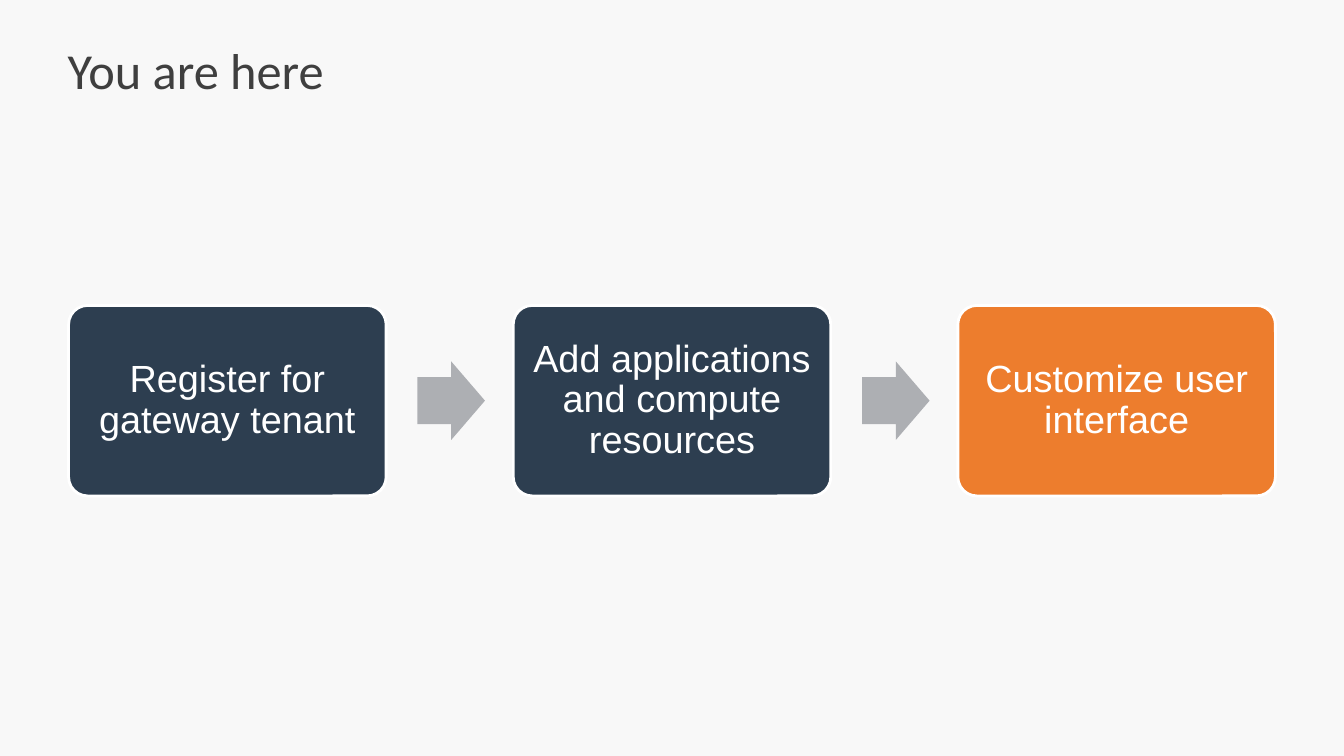
"""Build a slide with a three-step process whose current step is highlighted."""
from pptx import Presentation
from pptx.dml.color import RGBColor
from pptx.enum.shapes import MSO_SHAPE
from pptx.enum.text import MSO_ANCHOR, PP_ALIGN
from pptx.util import Inches, Pt

ROUNDED = MSO_SHAPE.ROUNDED_RECTANGLE
ARROW = MSO_SHAPE.RIGHT_ARROW
MIDDLE = MSO_ANCHOR.MIDDLE
LEFT, CENTER = PP_ALIGN.LEFT, PP_ALIGN.CENTER

PAPER = RGBColor(0xF8, 0xF8, 0xF8)
INK = RGBColor(0x3F, 0x3F, 0x3F)
NAVY = RGBColor(0x2D, 0x3E, 0x50)
ORANGE = RGBColor(0xED, 0x7D, 0x2D)
GRAY = RGBColor(0xAD, 0xAF, 0xB3)
WHITE = RGBColor(0xFF, 0xFF, 0xFF)

STEPS = [
    ("Register for gateway tenant", NAVY),
    ("Add applications and compute resources", NAVY),
    ("Customize user interface", ORANGE),
]
STEP_X, STEP_Y, STEP_W, STEP_H = 0.68, 3.03, 3.15, 1.89
PITCH = 4.41
ARROW_W, ARROW_H, ARROW_GAP = 0.67, 0.78, 0.31


class SlideBuilder:
    """Hold the text styles and the current slide."""

    title = {"size": Pt(36), "name": "Calibri", "color": INK}
    step = {"size": Pt(27), "name": "Arial", "color": WHITE}

    def __init__(self, prs):
        self.s = prs.slides.add_slide(prs.slide_layouts[6])
        fill = self.s.background.fill
        fill.solid()
        fill.fore_color.rgb = PAPER

    def set_text(self, sp, text, style, align, spacing, margins):
        """Fill a shape with one styled paragraph."""
        tf = sp.text_frame
        frame = {"word_wrap": True, "vertical_anchor": MIDDLE}
        sides = ("margin_left", "margin_top", "margin_right", "margin_bottom")
        frame.update(zip(sides, map(Inches, margins)))
        for key, value in frame.items():
            setattr(tf, key, value)
        p = tf.paragraphs[0]
        p.alignment = align
        p.line_spacing = spacing
        r = p.add_run()
        r.text = text
        for key, value in style.items():
            if key == "color":
                r.font.color.rgb = value
            else:
                setattr(r.font, key, value)

    def add_title(self, text, x, y, w, h):
        """Add the slide title."""
        sp = self.s.shapes.add_textbox(*map(Inches, (x, y, w, h)))
        self.set_text(sp, text, self.title, LEFT, 1.0, (0, 0.07, 0, 0.07))

    def add_shape(self, kind, x, y, w, h, color, adjustments):
        """Add a flat filled shape without an outline."""
        sp = self.s.shapes.add_shape(kind, *map(Inches, (x, y, w, h)))
        sp.shadow.inherit = False
        for i, value in enumerate(adjustments):
            sp.adjustments[i] = value
        sp.fill.solid()
        sp.fill.fore_color.rgb = color
        sp.line.fill.background()
        return sp

    def add_step(self, text, x, color):
        """Add a rounded, labelled step."""
        sp = self.add_shape(ROUNDED, x, STEP_Y, STEP_W, STEP_H, color, [0.1])
        sp.line.color.rgb = WHITE
        sp.line.width = Pt(2)
        self.set_text(sp, text, self.step, CENTER, 0.9, [0.11] * 4)

    def add_arrow(self, x):
        """Add a block arrow centred on the row of steps."""
        y = STEP_Y + (STEP_H - ARROW_H) / 2
        self.add_shape(ARROW, x, y, ARROW_W, ARROW_H, GRAY, [0.6, 0.5])


def main():
    """Build and save the slide."""
    prs = Presentation()
    prs.slide_width, prs.slide_height = Inches(13.33), Inches(7.5)
    slide = SlideBuilder(prs)
    slide.add_title("You are here", 0.67, 0.3, 12, 0.78)
    for i, (text, color) in enumerate(STEPS):
        x = STEP_X + i * PITCH
        if i:
            slide.add_arrow(x - PITCH + STEP_W + ARROW_GAP)
        slide.add_step(text, x, color)
    prs.save("out.pptx")


if __name__ == "__main__":
    main()
